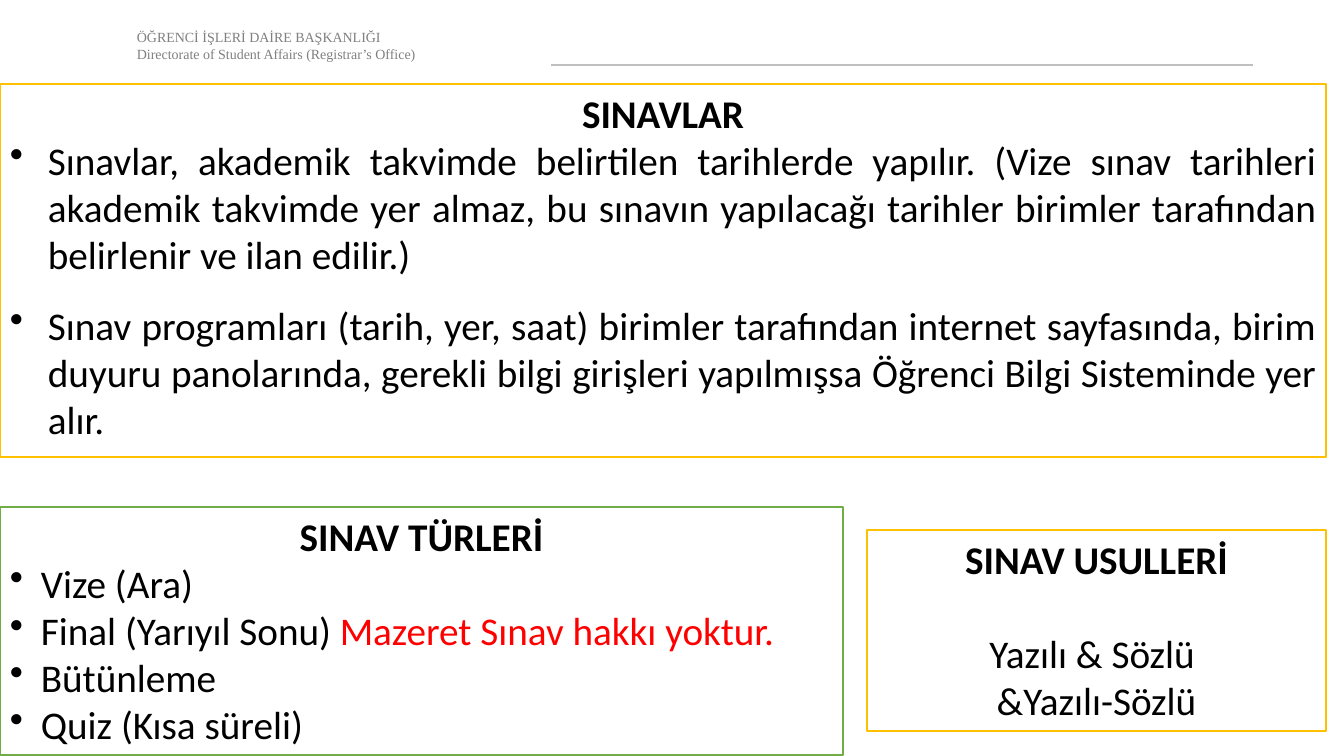
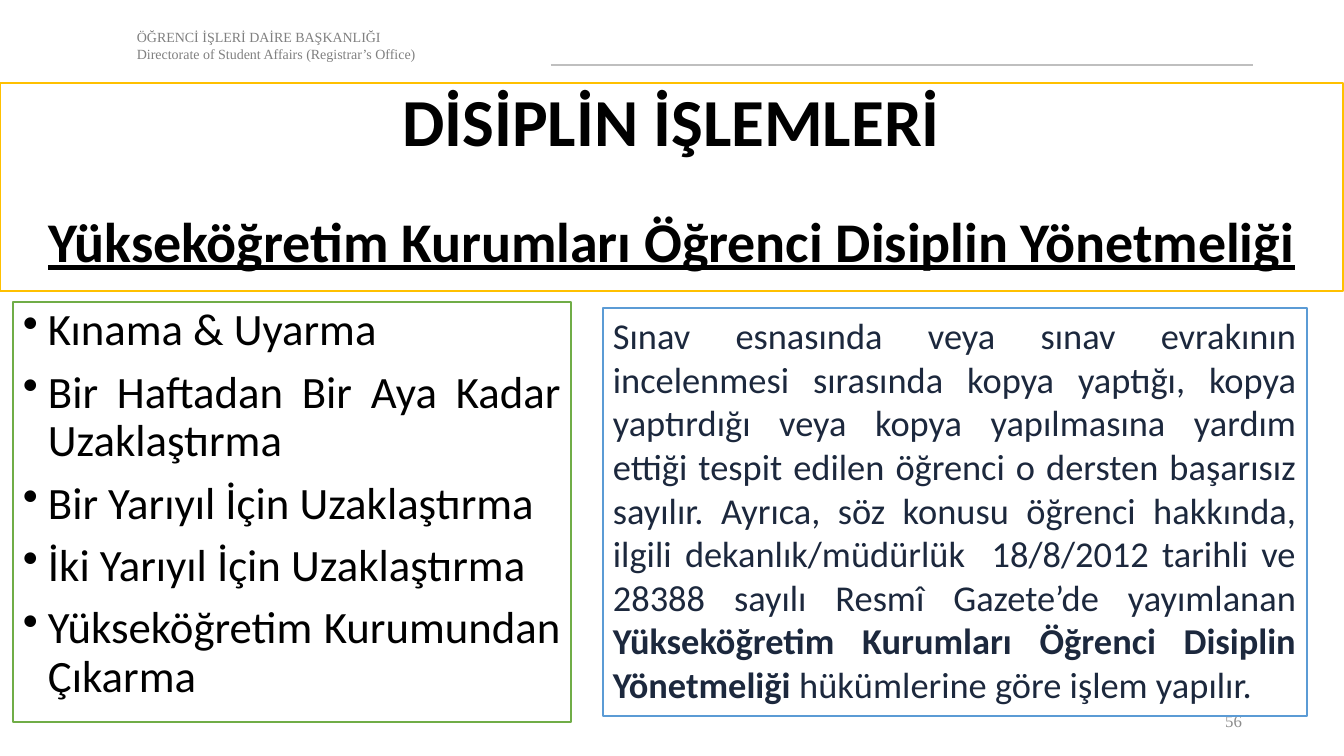
from dataclasses import dataclass

import lxml.etree
import pptx
import pptx.dml.color
import pptx.enum.shapes
import pptx.enum.text
import pptx.oxml.ns
import pptx.util

RGBColor = pptx.dml.color.RGBColor
PP_ALIGN = pptx.enum.text.PP_ALIGN

# Shared look
EMU_PER_PX = 914400 / 100.8
SLIDE_SIZE = (1344, 756)
BODY_FONT = "Calibri"
OFFICE_FONT = "Times New Roman"
BLACK = RGBColor(0x00, 0x00, 0x00)
WHITE = RGBColor(0xFF, 0xFF, 0xFF)
RED = RGBColor(0xFF, 0x00, 0x00)
NAVY = RGBColor(0x1C, 0x28, 0x3D)
GOLD = RGBColor(0xFF, 0xC0, 0x00)
GREEN = RGBColor(0x70, 0xAD, 0x47)
BLUE = RGBColor(0x5B, 0x9B, 0xD5)
RULE_GRAY = RGBColor(0xBF, 0xBF, 0xBF)
OFFICE_GRAY = RGBColor(0x80, 0x80, 0x80)
NUMBER_GRAY = RGBColor(0x8C, 0x8C, 0x8C)


@dataclass(frozen=True)
class Box:
    left: int
    top: int
    width: int
    height: int


@dataclass(frozen=True)
class Span:
    text: str
    color: RGBColor = BLACK
    bold: bool = False
    underline: bool = False


@dataclass(frozen=True)
class Para:
    spans: tuple[Span, ...]
    size: int = 28
    align: PP_ALIGN = PP_ALIGN.JUSTIFY
    indent: int = 0  # hanging indent in px; a bullet is drawn when set
    before: int = 0
    line_spacing: float = 1.0
    font: str = BODY_FONT


@dataclass(frozen=True)
class Panel:
    box: Box
    border: RGBColor
    paras: tuple[Para, ...]
    filled: bool = True
    inset_top: int = 5


def px(length: int) -> pptx.util.Emu:
    return pptx.util.Emu(round(length * EMU_PER_PX))


def heading(text: str, size: int = 28, **options) -> Para:
    return Para((Span(text, bold=True),), size, PP_ALIGN.CENTER, **options)


def bullet(*spans: Span, indent: int, **options) -> Para:
    return Para(spans, indent=indent, **options)


def place(shape, box: Box) -> None:
    shape.left, shape.top = px(box.left), px(box.top)
    shape.width, shape.height = px(box.width), px(box.height)


def add_bullet(paragraph, indent: int) -> None:
    properties = paragraph._p.get_or_add_pPr()
    properties.set("marL", str(px(indent)))
    properties.set("indent", str(-px(indent)))
    mark = lxml.etree.SubElement(properties, pptx.oxml.ns.qn("a:buChar"))
    mark.set("char", "•")


def write(frame, paras: tuple[Para, ...], anchor=pptx.enum.text.MSO_ANCHOR.TOP) -> None:
    frame.word_wrap = True
    frame.auto_size = pptx.enum.text.MSO_AUTO_SIZE.NONE
    frame.vertical_anchor = anchor
    for index, para in enumerate(paras):
        paragraph = frame.add_paragraph() if index else frame.paragraphs[0]
        if para.indent:
            add_bullet(paragraph, para.indent)
        paragraph.alignment = para.align
        paragraph.line_spacing = para.line_spacing
        paragraph.space_before = pptx.util.Pt(para.before)
        for span in para.spans:
            run = paragraph.add_run()
            run.text = span.text
            run.font.name = para.font
            run.font.size = pptx.util.Pt(para.size)
            run.font.bold = span.bold
            run.font.underline = span.underline
            run.font.color.rgb = span.color


def outline(shape, border: RGBColor) -> None:
    shape.line.color.rgb = border
    shape.line.width = pptx.util.Pt(1)


def draw_title(slide, box: Box, paras: tuple[Para, ...]):
    title = slide.shapes.title
    place(title, box)
    write(title.text_frame, paras)
    return title


def draw_panel(slide, panel: Panel) -> None:
    shape = slide.shapes.add_shape(pptx.enum.shapes.MSO_SHAPE.RECTANGLE, 0, 0, 0, 0)
    place(shape, panel.box)
    shape.shadow.inherit = False
    if panel.filled:
        shape.fill.solid()
        shape.fill.fore_color.rgb = WHITE
    else:
        shape.fill.background()
    outline(shape, panel.border)
    shape.text_frame.margin_top = px(panel.inset_top)
    write(shape.text_frame, panel.paras)


def draw_label(slide, box: Box, paras: tuple[Para, ...], anchor=pptx.enum.text.MSO_ANCHOR.TOP):
    label = slide.shapes.add_textbox(0, 0, 0, 0)
    place(label, box)
    write(label.text_frame, paras, anchor)
    return label


def move_header_to_layout(slide) -> None:
    """Draw the office name and rule once, on the layout all slides share."""
    layout = slide.slide_layout
    for placeholder in list(layout.placeholders):
        if placeholder.placeholder_format.idx:
            layout.shapes.element.remove(placeholder.element)
    rule = slide.shapes.add_connector(
        pptx.enum.shapes.MSO_CONNECTOR.STRAIGHT, px(551), px(65), px(1253), px(65))
    rule.line.color.rgb = RULE_GRAY
    rule.line.width = pptx.util.Pt(1.5)
    lxml.etree.SubElement(rule.element.spPr, pptx.oxml.ns.qn("a:effectLst"))
    office_lines = ("ÖĞRENCİ İŞLERİ DAİRE BAŞKANLIĞI",
                    "Directorate of Student Affairs (Registrar’s Office)")
    office = draw_label(slide, Box(127, 24, 672, 44), tuple(
        Para((Span(line, OFFICE_GRAY),), 10, PP_ALIGN.LEFT, font=OFFICE_FONT)
        for line in office_lines))
    for part in (rule, office):
        layout.shapes.element.append(part.element)


def build_exams(slide) -> None:
    # The title sits inside the top of the rules panel
    draw_title(slide, Box(0, 84, 1326, 52), (heading("SINAVLAR"),))
    rules = Panel(Box(0, 84, 1326, 373), GOLD, (
        bullet(Span("Sınavlar, akademik takvimde belirtilen tarihlerde yapılır. (Vize sınav "
                    "tarihleri akademik takvimde yer almaz, bu sınavın yapılacağı tarihler "
                    "birimler tarafından belirlenir ve ilan edilir.)"), indent=38),
        bullet(Span("Sınav programları (tarih, yer, saat) birimler tarafından internet "
                    "sayfasında, birim duyuru panolarında, gerekli bilgi girişleri yapılmışsa "
                    "Öğrenci Bilgi Sisteminde yer alır."), indent=38, before=17),
    ), filled=False, inset_top=52)
    kinds = Panel(Box(0, 507, 843, 248), GREEN, (
        heading("SINAV TÜRLERİ"),
        bullet(Span("Vize (Ara)"), indent=31),
        bullet(Span("Final (Yarıyıl Sonu) "), Span("Mazeret Sınav hakkı yoktur.", RED), indent=31),
        bullet(Span("Bütünleme"), indent=31),
        bullet(Span("Quiz (Kısa süreli)"), indent=31),
    ))
    methods = Panel(Box(867, 530, 459, 201), GOLD, (
        heading("SINAV USULLERİ"),
        Para((Span("Yazılı & Sözlü "),), align=PP_ALIGN.CENTER, before=34),
        Para((Span("&Yazılı-Sözlü"),), align=PP_ALIGN.CENTER),
    ))
    for panel in (rules, kinds, methods):
        draw_panel(slide, panel)


def build_discipline(slide) -> None:
    regulation = Span("Yükseköğretim Kurumları Öğrenci Disiplin Yönetmeliği",
                      bold=True, underline=True)
    title = draw_title(slide, Box(0, 83, 1343, 208), (
        heading("DİSİPLİN İŞLEMLERİ", 48, line_spacing=0.9),
        Para((regulation,), 40, PP_ALIGN.CENTER, before=38, line_spacing=0.9),
    ))
    outline(title, GOLD)

    draw_label(slide, Box(1207, 701, 45, 40),
               (Para((Span("56", NUMBER_GRAY),), 12, PP_ALIGN.RIGHT, font=OFFICE_FONT),),
               pptx.enum.text.MSO_ANCHOR.MIDDLE)

    penalty_names = ("Kınama & Uyarma", "Bir Haftadan Bir Aya Kadar Uzaklaştırma",
                     "Bir Yarıyıl İçin Uzaklaştırma", "İki Yarıyıl İçin Uzaklaştırma",
                     "Yükseköğretim Kurumundan Çıkarma")
    penalties = Panel(Box(13, 302, 558, 420), GREEN, tuple(
        bullet(Span(name), indent=25, size=32, before=10 if index else 0, line_spacing=0.9)
        for index, name in enumerate(penalty_names)))
    cheating = Panel(Box(603, 308, 704, 408), BLUE, (Para((
        Span("Sınav esnasında veya sınav evrakının incelenmesi sırasında kopya yaptığı, kopya "
             "yaptırdığı veya kopya yapılmasına yardım ettiği tespit edilen öğrenci o dersten "
             "başarısız sayılır. Ayrıca, söz konusu öğrenci hakkında, ilgili "
             "dekanlık/müdürlük  18/8/2012 tarihli ve 28388 sayılı Resmî Gazete’de "
             "yayımlanan ", NAVY),
        Span("Yükseköğretim Kurumları Öğrenci Disiplin Yönetmeliği ", NAVY, bold=True),
        Span("hükümlerine göre işlem yapılır.", NAVY),
    ), 26),))
    for panel in (penalties, cheating):
        draw_panel(slide, panel)


def main() -> None:
    deck = pptx.Presentation()
    deck.slide_width, deck.slide_height = map(px, SLIDE_SIZE)
    title_only = deck.slide_layouts[5]
    exams = deck.slides.add_slide(title_only)
    move_header_to_layout(exams)
    build_exams(exams)
    build_discipline(deck.slides.add_slide(title_only))
    deck.save("out.pptx")


if __name__ == "__main__":
    main()
